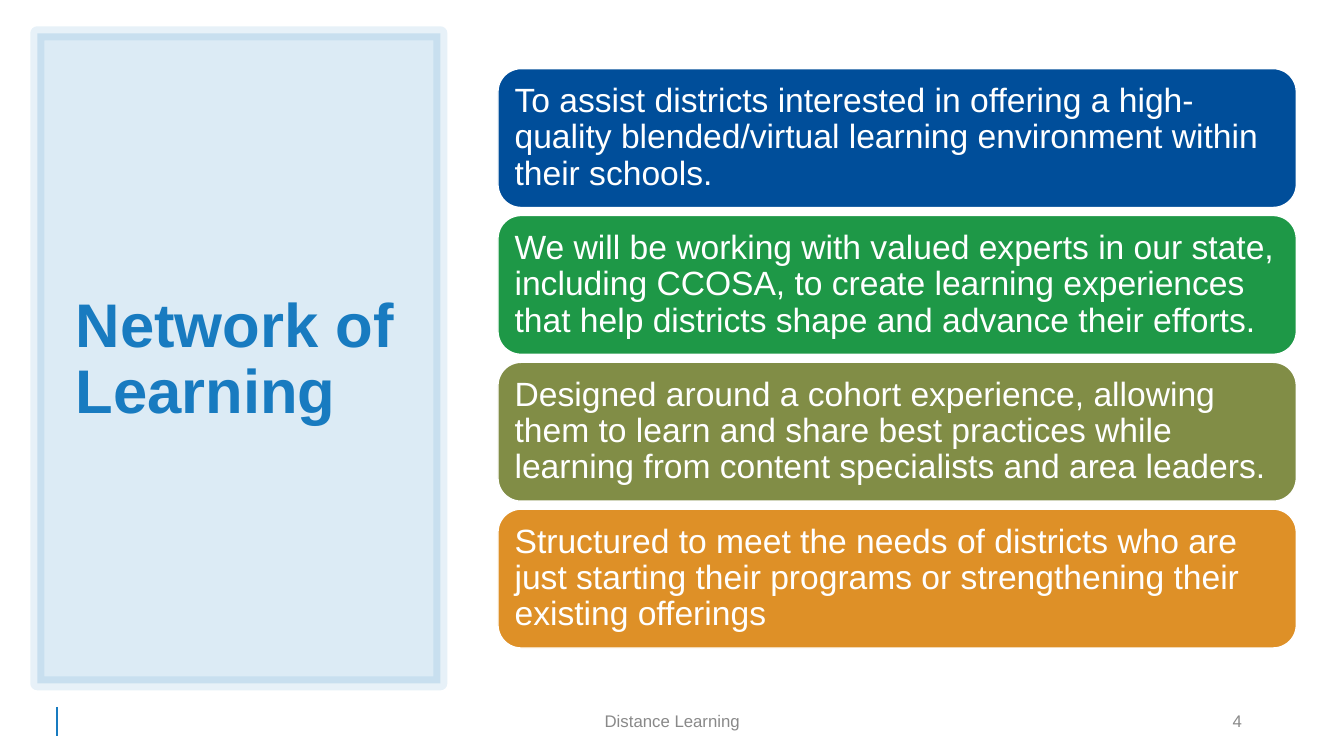
import pptx
import pptx.dml.color
import pptx.enum.shapes
import pptx.enum.text
import pptx.oxml
import pptx.oxml.ns
import pptx.util

Cm = pptx.util.Cm
Pt = pptx.util.Pt
RGBColor = pptx.dml.color.RGBColor
PP_ALIGN = pptx.enum.text.PP_ALIGN
MSO_ANCHOR = pptx.enum.text.MSO_ANCHOR
MSO_SHAPE = pptx.enum.shapes.MSO_SHAPE

BLUE = RGBColor(0x18, 0x7B, 0xC0)
NAVY = RGBColor(0x00, 0x4E, 0x9A)
GREEN = RGBColor(0x1E, 0x98, 0x47)
OLIVE = RGBColor(0x81, 0x8D, 0x46)
ORANGE = RGBColor(0xDE, 0x90, 0x27)
GRAY = RGBColor(0x89, 0x89, 0x89)
WHITE = RGBColor(0xFF, 0xFF, 0xFF)

CARD_TOP = 1.73
CARD_PITCH = 3.7
CARDS = [
    (NAVY, "To assist districts interested in offering a high-quality "
           "blended/virtual learning environment within their schools."),
    (GREEN, "We will be working with valued experts in our state, including CCOSA, "
            "to create learning experiences that help districts shape and advance "
            "their efforts."),
    (OLIVE, "Designed around a cohort experience, allowing them to learn and share "
            "best practices while learning from content specialists and area leaders."),
    (ORANGE, "Structured to meet the needs of districts who are just starting their "
             "programs or strengthening their existing offerings"),
]


def write_text(sp, text, size, color, align=PP_ALIGN.LEFT, bold=False, spacing=None):
    tf = sp.text_frame
    tf.text = text
    tf.word_wrap = True
    tf.auto_size = pptx.enum.text.MSO_AUTO_SIZE.NONE
    tf.vertical_anchor = MSO_ANCHOR.MIDDLE
    p = tf.paragraphs[0]
    p.alignment = align
    p.line_spacing = spacing
    r = p.runs[0]
    r.font.name = "Arial"
    r.font.size = Pt(size)
    r.font.bold = bold
    r.font.color.rgb = color


def add_box(s, kind, left, top, width, height, fill, line, line_width):
    sp = s.shapes.add_shape(kind, Cm(left), Cm(top), Cm(width), Cm(height))
    sp.shadow.inherit = False
    sp.fill.solid()
    sp.fill.fore_color.rgb = fill
    sp.line.color.rgb = line
    sp.line.width = Pt(line_width)
    return sp


def add_panel(s):
    sp = add_box(s, MSO_SHAPE.RECTANGLE, 0.94, 0.84, 10.16, 16.38, BLUE, BLUE, 10)
    colors = sp.element.spPr.iter(pptx.oxml.ns.qn("a:srgbClr"))
    for color, opacity in zip(colors, (15, 10)):
        alpha = pptx.oxml.parse_xml(
            f'<a:alpha {pptx.oxml.ns.nsdecls("a")} val="{opacity * 1000}"/>')
        color.append(alpha)
    return sp


def place_title(s, panel):
    title = s.shapes.title
    title.left, title.top = Cm(1.65), Cm(1.78)
    title.width, title.height = Cm(8.79), Cm(14.61)
    write_text(title, "Network of Learning", 44, BLUE, bold=True, spacing=0.9)
    title.element.addprevious(panel.element)


def add_card(s, index, fill, text):
    top = CARD_TOP + index * CARD_PITCH
    sp = add_box(s, MSO_SHAPE.ROUNDED_RECTANGLE, 12.55, top, 20.12, 3.5, fill, WHITE, 1)
    tf = sp.text_frame
    tf.margin_left = tf.margin_right = tf.margin_top = tf.margin_bottom = Cm(0.25)
    write_text(sp, text, 24, WHITE, spacing=0.9)


def add_footer(s, left, width, text, align):
    sp = s.shapes.add_textbox(Cm(left), Cm(17.65), Cm(width), Cm(1.02))
    write_text(sp, text, 12, GRAY, align)


def add_footer_rule(s):
    rule = s.shapes.add_connector(pptx.enum.shapes.MSO_CONNECTOR.STRAIGHT,
                                  Cm(1.43), Cm(17.81), Cm(1.43), Cm(18.54))
    rule.line.color.rgb = BLUE
    rule.line.width = Pt(1.5)
    rule.element.spPr.append(pptx.oxml.parse_xml(
        f'<a:effectLst {pptx.oxml.ns.nsdecls("a")}/>'))


def main():
    prs = pptx.Presentation()
    prs.slide_width, prs.slide_height = Cm(33.87), Cm(19.05)
    s = prs.slides.add_slide(prs.slide_layouts.get_by_name("Title Only"))
    add_footer_rule(s)
    place_title(s, add_panel(s))
    add_footer(s, 11.23, 11.43, "Distance Learning", PP_ALIGN.CENTER)
    add_footer(s, 23.93, 7.62, "4", PP_ALIGN.RIGHT)
    for index, (fill, text) in enumerate(CARDS):
        add_card(s, index, fill, text)
    prs.save("out.pptx")


if __name__ == "__main__":
    main()
